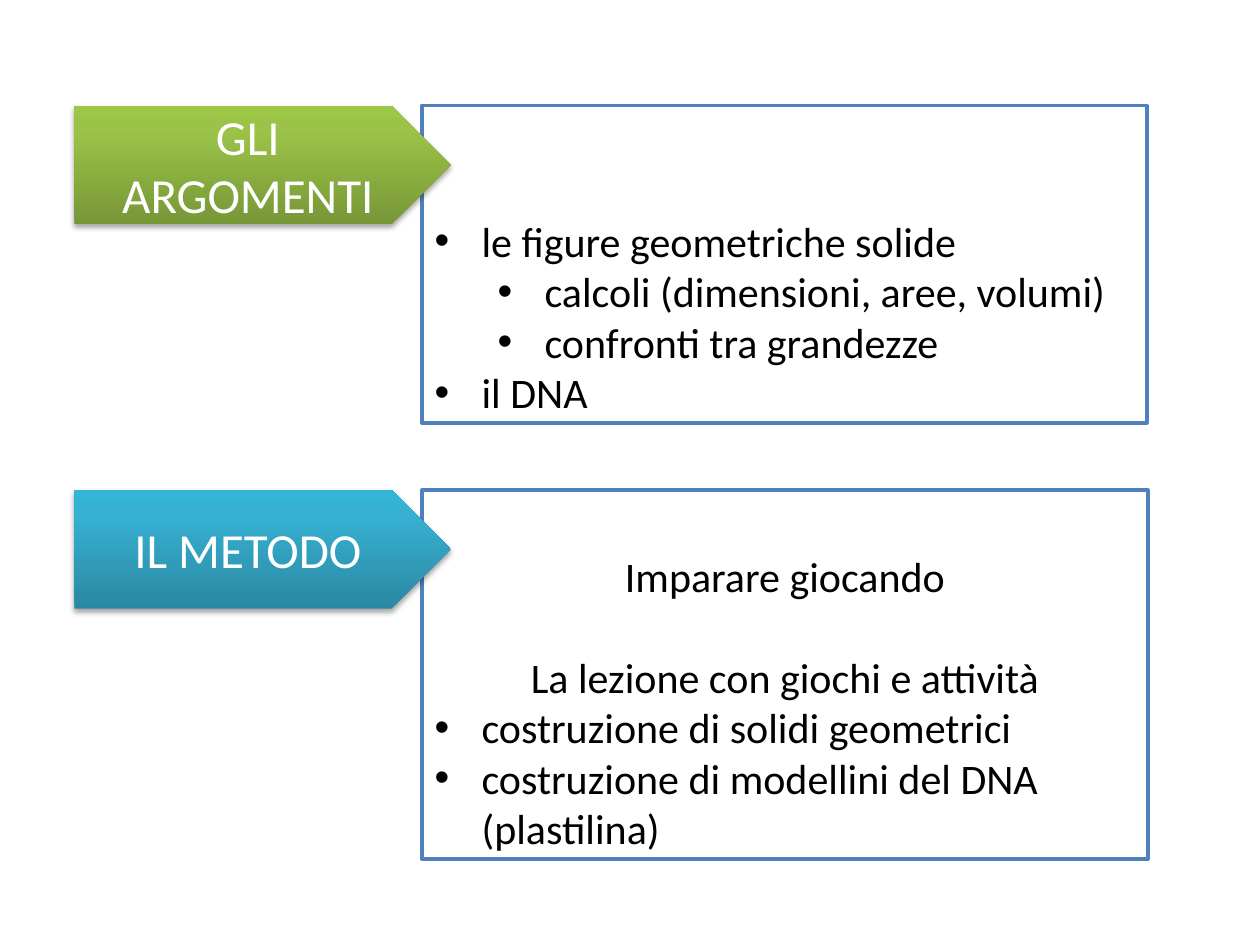
from dataclasses import dataclass

from lxml import etree
from pptx import Presentation
from pptx import util as u
from pptx.dml.color import RGBColor
from pptx.enum import shapes, text
from pptx.oxml.ns import qn


@dataclass(frozen=True)
class Theme:
    font: str = "Calibri"
    body_size: int = 24
    label_size: int = 28
    blank_line: int = 29
    paper: str = "FFFFFF"
    ink: str = "000000"
    border: str = "4F81BD"
    green: tuple[str, ...] = ("779737", "9BC348", "9DC746")
    cyan: tuple[str, ...] = ("2A88A2", "37B1D2", "34B4D6")
    stops: tuple[int, ...] = (0, 80, 100)


@dataclass(frozen=True)
class Line:
    words: str
    bullet_level: int | None = 0
    gap: int = 0


@dataclass(frozen=True)
class Section:
    label: str
    colors: tuple[str, ...]
    top: float
    width: float
    height: float
    lines: tuple[Line, ...]


THEME = Theme()
LABEL_LEFT, LABEL_WIDTH, LABEL_HEIGHT = 1.5, 7.59, 2.39
BOX_LEFT = 8.51
HANGING, LEVEL_STEP = 0.95, 1.27

SECTIONS = (
    Section("GLI ARGOMENTI", THEME.green, 2.13, 14.61, 6.4, (
        Line("le figure geometriche solide"),
        Line("calcoli (dimensioni, aree, volumi)", 1),
        Line("confronti tra grandezze", 1),
        Line("il DNA"),
    )),
    Section("IL METODO", THEME.cyan, 9.88, 14.63, 7.44, (
        Line("Imparare giocando", None),
        Line("La lezione con giochi e attività", None, THEME.blank_line),
        Line("costruzione di solidi geometrici"),
        Line("costruzione di modellini del DNA (plastilina)"),
    )),
)


def write(paragraph, words: str, *, size: int, color: str, centered: bool = False,
          gap: int = 0, bullet_level: int | None = None) -> None:
    run = paragraph.add_run()
    run.text = words
    run.font.name = THEME.font
    run.font.size = u.Pt(size)
    run.font.color.rgb = RGBColor.from_string(color)
    paragraph.alignment = text.PP_ALIGN.CENTER if centered else text.PP_ALIGN.LEFT
    if gap:
        paragraph.space_before = u.Pt(gap)
    if bullet_level is not None:
        paragraph.level = bullet_level
        properties = paragraph._p.get_or_add_pPr()
        properties.set("marL", str(u.Cm(HANGING + bullet_level * LEVEL_STEP)))
        properties.set("indent", str(-u.Cm(HANGING)))
        etree.SubElement(properties, qn("a:buFont"), typeface="Arial")
        etree.SubElement(properties, qn("a:buChar"), char="•")


def add_color(parent, color: str):
    return etree.SubElement(parent, qn("a:srgbClr"), val=color)


def fill_gradient(shape, colors: tuple[str, ...]) -> None:
    shape.fill.gradient()
    shape.fill.gradient_angle = 90
    stop_list = shape._element.spPr.find(f".//{qn('a:gsLst')}")
    for stop in list(stop_list):
        stop_list.remove(stop)
    for position, color in zip(THEME.stops, colors):
        stop = etree.SubElement(stop_list, qn("a:gs"), pos=str(position * 1000))
        add_color(stop, color)


def add_shadow(shape) -> None:
    effects = shape._element.spPr.find(qn("a:effectLst"))
    shadow = etree.SubElement(
        effects, qn("a:outerShdw"), blurRad=str(u.Pt(3.1)), dist=str(u.Pt(1.8)),
        dir="5400000", rotWithShape="0")
    etree.SubElement(add_color(shadow, THEME.ink), qn("a:alpha"), val="35000")


def add_outline(slide, kind, left: float, top: float, width: float, height: float):
    shape = slide.shapes.add_shape(kind, u.Cm(left), u.Cm(top), u.Cm(width), u.Cm(height))
    shape.shadow.inherit = False
    shape.text_frame.word_wrap = True
    return shape


def draw_box(slide, section: Section) -> None:
    shape = add_outline(slide, shapes.MSO_SHAPE.RECTANGLE, BOX_LEFT, section.top,
                        section.width, section.height)
    shape.fill.solid()
    shape.fill.fore_color.rgb = RGBColor.from_string(THEME.paper)
    shape.line.color.rgb = RGBColor.from_string(THEME.border)
    shape.line.width = u.Pt(2)
    frame = shape.text_frame
    frame.vertical_anchor = text.MSO_ANCHOR.BOTTOM
    for index, line in enumerate(section.lines):
        paragraph = frame.add_paragraph() if index else frame.paragraphs[0]
        write(paragraph, line.words, size=THEME.body_size, color=THEME.ink,
              centered=line.bullet_level is None, gap=line.gap,
              bullet_level=line.bullet_level)


def draw_label(slide, section: Section) -> None:
    shape = add_outline(slide, shapes.MSO_SHAPE.PENTAGON, LABEL_LEFT, section.top,
                        LABEL_WIDTH, LABEL_HEIGHT)
    fill_gradient(shape, section.colors)
    shape.line.fill.background()
    add_shadow(shape)
    shape.text_frame.vertical_anchor = text.MSO_ANCHOR.MIDDLE
    write(shape.text_frame.paragraphs[0], section.label, size=THEME.label_size,
          color=THEME.paper, centered=True)


def main() -> None:
    presentation = Presentation()
    presentation.slide_width, presentation.slide_height = u.Cm(25.4), u.Cm(19.05)
    slide = presentation.slides.add_slide(presentation.slide_layouts[6])
    for draw in (draw_box, draw_label):
        for section in SECTIONS:
            draw(slide, section)
    presentation.save("out.pptx")


if __name__ == "__main__":
    main()
